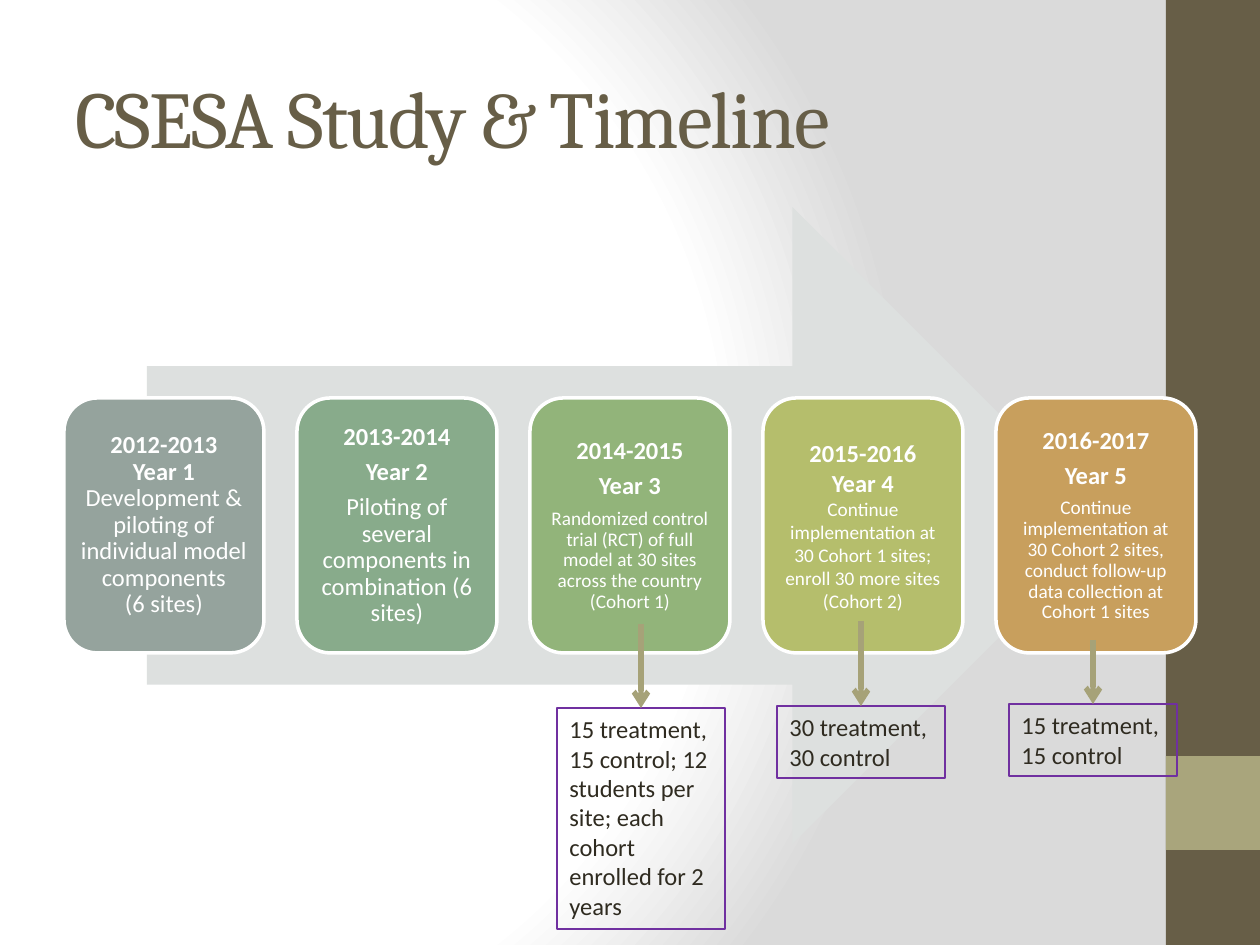
from pptx import Presentation
from pptx.dml.color import RGBColor as Rgb
from pptx.enum.shapes import MSO_CONNECTOR as Link, MSO_SHAPE as Kind
from pptx.enum.text import MSO_ANCHOR as Anchor, PP_ALIGN as Align
from pptx.oxml import parse_xml
from pptx.oxml.ns import nsdecls
from pptx.util import Pt

PX = 914400 / 126
INK = {
    "white": "FFFFFF", "grey": "DADADA", "brown": "675E47", "sand": "A9A57C",
    "pale": "DDE0DF", "text": "2F2B20", "purple": "7030A0", "link": "A6A278",
    "card1": "95A39D", "card2": "88AB8B", "card3": "92B47A",
    "card4": "B5BE6C", "card5": "C89F5D",
}


def block(kind, box, fill=None, line=None, width=0):
    """Add a preset shape; box is left, top, width, height in px."""
    shape = slide.shapes.add_shape(kind, *[round(n * PX) for n in box])
    shape.shadow.inherit = False
    if fill:
        shape.fill.solid()
        shape.fill.fore_color.rgb = Rgb.from_string(INK[fill])
    else:
        shape.fill.background()
    if line:
        shape.line.color.rgb = Rgb.from_string(INK[line])
        shape.line.width = Pt(width)
    else:
        shape.line.fill.background()
    return shape


def write(shape, lines, size=14, last=None, bold=0, color="text", font="Calibri",
          align=Align.LEFT, anchor=Anchor.TOP, lead=1.0, after=0, track=0, pad=None):
    """Fill a shape with lines; the first `bold` are bold, the rest use size `last`."""
    frame = shape.text_frame
    frame.word_wrap = True
    frame.vertical_anchor = anchor
    if pad is not None:
        frame.margin_left = frame.margin_right = round(pad * PX)
        frame.margin_top = frame.margin_bottom = round(pad * PX)
    for i, text in enumerate(lines):
        para = frame.add_paragraph() if i else frame.paragraphs[0]
        para.alignment = align
        para.line_spacing = lead
        para.space_after = Pt(after)
        run = para.add_run()
        run.text = text
        run.font.name = font
        run.font.size = Pt(size if i < bold else last or size)
        run.font.bold = i < bold
        run.font.color.rgb = Rgb.from_string(INK[color])
        if track:
            run.font._element.set("spc", str(track))


deck = Presentation()
deck.slide_width = round(1260 * PX)
deck.slide_height = round(945 * PX)
slide = deck.slides.add_slide(deck.slide_layouts[6])

# Background
stops = "".join(
    f'<a:gs pos="{pos}"><a:srgbClr val="{INK[name]}"/></a:gs>'
    for pos, name in [(0, "white"), (75000, "white"), (100000, "grey")])
slide.element.cSld.insert(0, parse_xml(
    f'<p:bg {nsdecls("p", "a")}><p:bgPr><a:gradFill rotWithShape="1">'
    f'<a:gsLst>{stops}</a:gsLst><a:path path="circle">'
    '<a:fillToRect l="20000" t="50000" r="100000" b="50000"/></a:path>'
    '</a:gradFill><a:effectLst/></p:bgPr></p:bg>'))
block(Kind.RECTANGLE, (1166, 0, 94, 945), "brown")
block(Kind.RECTANGLE, (1166, 756, 94, 94), "sand")

# Title
title = slide.shapes.add_textbox(*[round(n * PX) for n in (63, 38, 1050, 157)])
write(title, ["CSESA Study & Timeline"], size=46, color="brown", font="Cambria",
      anchor=Anchor.MIDDLE, track=-100)

# Timeline
block(Kind.RIGHT_ARROW, (147, 207, 964, 637), "pale")
tight = {"lead": 0.9}
loose = {"lead": 0.9, "after": 5}
cards = [
    ("2012-2013", ["Development & piloting of individual model components", "(6 sites)"],
     14, tight),
    ("2013-2014", ["Piloting of several components in combination (6 sites)"], 14, loose),
    ("2014-2015", ["Randomized control trial (RCT) of full model at 30 sites "
                   "across the country (Cohort 1)"], 11, loose),
    ("2015-2016", ["Continue implementation at 30 Cohort 1 sites; "
                   "enroll 30 more sites (Cohort 2)"], 11, {}),
    ("2016-2017", ["Continue implementation at 30 Cohort 2 sites, conduct follow-up "
                   "data collection at Cohort 1 sites"], 11, loose),
]
for i, (span, body, size, gaps) in enumerate(cards):
    card = block(Kind.ROUNDED_RECTANGLE, (64 + 233 * i, 398, 200, 255),
                 f"card{i + 1}", "white", 2)
    write(card, [span, f"Year {i + 1}", *body], last=size, bold=2, color="white",
          align=Align.CENTER, anchor=Anchor.MIDDLE, pad=7, **gaps)

# Cohort notes, each with an arrow from its card
notes = [
    (557, 708, 221, 624, "15 treatment, 15 control; 12 students per site; "
                         "each cohort enrolled for 2 years"),
    (777, 706, 72, 621, "30 treatment, 30 control"),
    (1009, 704, 72, 640, "15 treatment, 15 control"),
]
for left, top, high, start, text in notes:
    note = block(Kind.RECTANGLE, (left, top, 168, high), None, "purple", 0.75)
    write(note, [text])
    mid = left + 84
    arrow = slide.shapes.add_connector(
        Link.STRAIGHT, *[round(n * PX) for n in (mid, start, mid, top)])
    arrow.end_connect(note, 0)
    arrow.line.color.rgb = Rgb.from_string(INK["link"])
    arrow.line.width = Pt(3)
    arrow.line._get_or_add_ln().append(
        parse_xml(f'<a:tailEnd {nsdecls("a")} type="arrow"/>'))
    arrow._element.spPr.append(parse_xml(f'<a:effectLst {nsdecls("a")}/>'))

deck.save("out.pptx")
